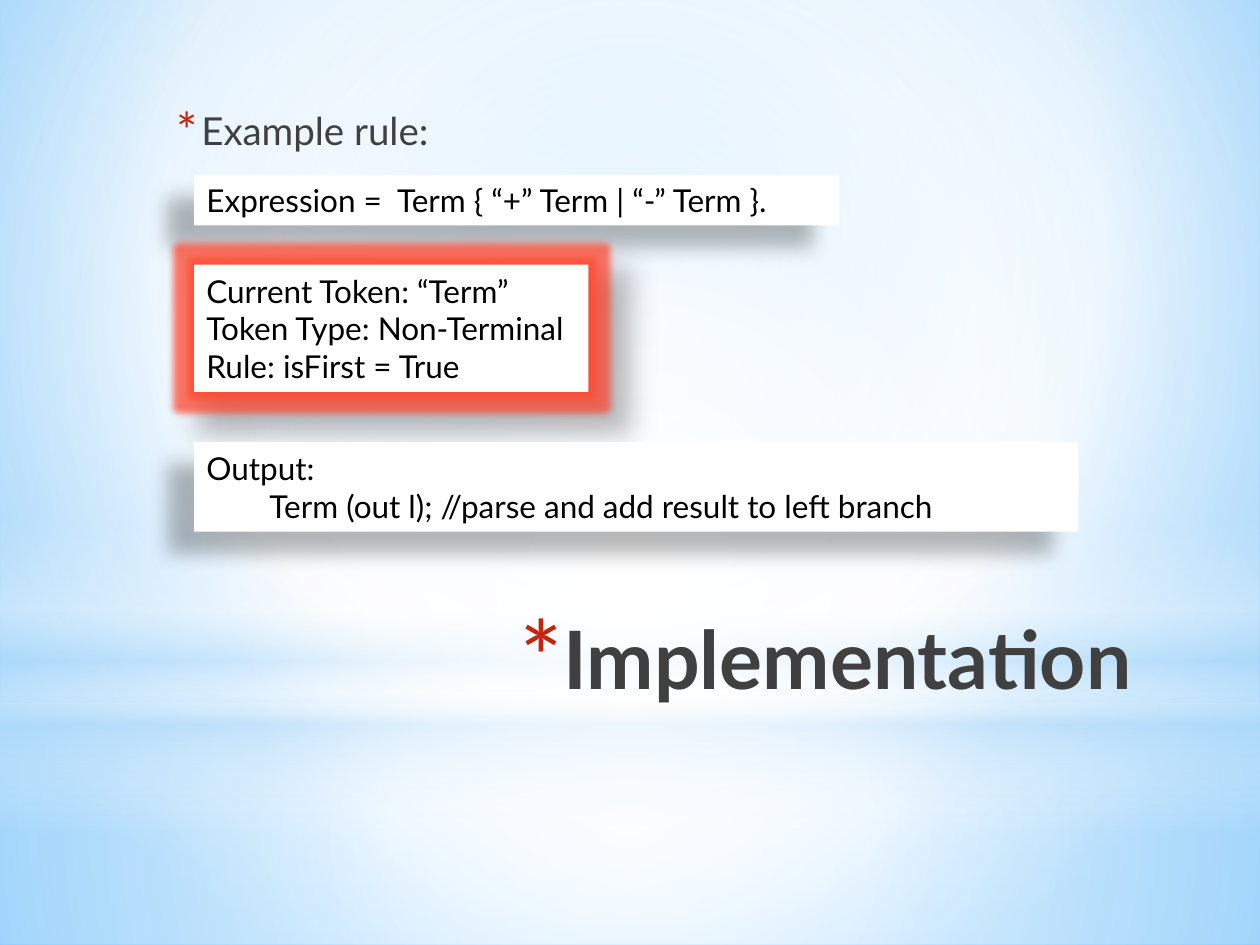
from lxml import etree
from pptx import Presentation
from pptx.dml.color import RGBColor
from pptx.enum.shapes import MSO_SHAPE
from pptx.enum.text import MSO_ANCHOR, PP_ALIGN
from pptx.oxml import parse_xml
from pptx.oxml.ns import nsdecls, qn
from pptx.util import Pt

RECTANGLE = MSO_SHAPE.RECTANGLE
OVAL = MSO_SHAPE.OVAL
LEFT = PP_ALIGN.LEFT
RIGHT = PP_ALIGN.RIGHT
TOP = MSO_ANCHOR.TOP
MIDDLE = MSO_ANCHOR.MIDDLE

FONT = "Lato"
BLACK = "000000"
GRAY = "404040"
WHITE = "FFFFFF"
RED = "C3260C"
PALE_BLUE = "B4DCFA"
CENTER = (50, 50, 50, 50)
CARD_LEFT = 110.9
SOFT_SHADOW = (28, 11.8, 19.7, 141)
GLOW_SHADOW = (30, 15, 18, 45)


def color(hex_string):
    return RGBColor.from_string(hex_string)


def apply_gradient(fill, parent, stops, focus=None):
    fill.solid()
    stop_xml = "".join(
        f'<a:gs pos="{position * 1000}"><a:srgbClr val="{hex_string}">'
        f'<a:alpha val="{opacity * 1000}"/></a:srgbClr></a:gs>'
        for position, hex_string, opacity in stops
    )
    if focus:
        sides = " ".join(f'{side}="{value * 1000}"' for side, value in zip("ltrb", focus))
        direction = f'<a:path path="circle"><a:fillToRect {sides}/></a:path>'
    else:
        direction = '<a:lin ang="5400000" scaled="0"/>'
    gradient = parse_xml(
        f'<a:gradFill {nsdecls("a")} rotWithShape="1">'
        f"<a:gsLst>{stop_xml}</a:gsLst>{direction}</a:gradFill>"
    )
    solid = parent.find(qn("a:solidFill"))
    parent.replace(solid, gradient)


def add_plain_shape(slide, kind, left, top, width, height):
    shape = slide.shapes.add_shape(kind, Pt(left), Pt(top), Pt(width), Pt(height))
    shape.shadow.inherit = False
    shape.line.fill.background()
    return shape


def add_gradient_shape(slide, kind, top, height, stops, focus=None):
    shape = add_plain_shape(slide, kind, 0, top, 720, height)
    apply_gradient(shape.fill, shape.element.spPr, stops, focus)


def write_text(text_frame, text, size, hex_string, alignment=LEFT, anchor=TOP, bold=False):
    text_frame.text = text
    text_frame.word_wrap = True
    text_frame.vertical_anchor = anchor
    for paragraph in text_frame.paragraphs:
        paragraph.alignment = alignment
        for run in paragraph.runs:
            run.font.name = FONT
            run.font.size = Pt(size)
            run.font.bold = bold
            run.font.color.rgb = color(hex_string)


def add_bullet(paragraph, margin, indent, percent):
    properties = paragraph._p.get_or_add_pPr()
    properties.set("marL", str(Pt(margin)))
    properties.set("indent", str(Pt(indent)))
    bullet_color = etree.SubElement(properties, qn("a:buClr"))
    etree.SubElement(bullet_color, qn("a:srgbClr"), val=RED)
    etree.SubElement(properties, qn("a:buSzPct"), val=str(percent * 1000))
    etree.SubElement(properties, qn("a:buFont"), typeface=FONT)
    etree.SubElement(properties, qn("a:buChar"), char="*")


def add_effects(shape, shadow, glow=False):
    effects = shape.element.spPr.find(qn("a:effectLst"))
    if glow:
        effects.append(parse_xml(
            f'<a:glow {nsdecls("a")} rad="{Pt(8)}"><a:srgbClr val="FF4A33">'
            '<a:alpha val="75000"/></a:srgbClr></a:glow>'
        ))
    opacity, blur, distance, angle = shadow
    effects.append(parse_xml(
        f'<a:outerShdw {nsdecls("a")} blurRad="{Pt(blur)}" dist="{Pt(distance)}" '
        f'dir="{angle * 60000}" algn="ctr" rotWithShape="0"><a:srgbClr val="{BLACK}">'
        f'<a:alpha val="{opacity * 1000}"/></a:srgbClr></a:outerShdw>'
    ))


def add_card(slide, top, width, height, text, shadow, glow=False):
    card = add_plain_shape(slide, RECTANGLE, CARD_LEFT, top, width, height)
    card.fill.solid()
    card.fill.fore_color.rgb = color(WHITE)
    add_effects(card, shadow, glow)
    write_text(card.text_frame, text, 18, BLACK, anchor=MIDDLE)


def add_backdrop(slide):
    fill = slide.background.fill
    fill.solid()
    background = slide.element.find(".//" + qn("p:bgPr"))
    apply_gradient(fill, background,
                   [(0, "9ED5FF", 100), (60, WHITE, 100), (100, "5BB9FF", 100)],
                   (20, 10, 20, 60))
    add_gradient_shape(slide, RECTANGLE, 401.8, 138.2,
                       [(0, WHITE, 91), (37, WHITE, 76), (100, PALE_BLUE, 79)], CENTER)
    add_gradient_shape(slide, RECTANGLE, 0, 401.8,
                       [(0, WHITE, 89), (48, WHITE, 62), (100, PALE_BLUE, 79)], CENTER)
    add_gradient_shape(slide, RECTANGLE, 296.6, 180,
                       [(0, WHITE, 0), (29, WHITE, 30), (45, PALE_BLUE, 40),
                        (55, WHITE, 26), (65, PALE_BLUE, 60), (100, WHITE, 0)])
    add_gradient_shape(slide, OVAL, 126, 401.8,
                       [(0, WHITE, 100), (56, WHITE, 0)], CENTER)


def place_title(slide):
    title = slide.shapes.title
    slide.shapes.element.append(title.element)
    title.left, title.top, title.width, title.height = Pt(141.1), Pt(344.2), Pt(512.6), Pt(90)
    write_text(title.text_frame, "Implementation", 46, GRAY, RIGHT, bold=True)
    add_bullet(title.text_frame.paragraphs[0], 25.2, -25.2, 128)


def add_body(slide):
    body = slide.shapes.add_textbox(Pt(90), Pt(57.6), Pt(504), Pt(273.6))
    write_text(body.text_frame, "Example rule:", 22, GRAY)
    paragraph = body.text_frame.paragraphs[0]
    paragraph.space_after = Pt(3)
    add_bullet(paragraph, 18, -14.4, 130)


def main():
    presentation = Presentation()
    presentation.slide_width = Pt(720)
    presentation.slide_height = Pt(540)
    slide = presentation.slides.add_slide(presentation.slide_layouts[5])
    add_backdrop(slide)
    place_title(slide)
    add_body(slide)
    add_card(slide, 100.1, 368.6, 28.8,
             "Expression =  Term { “+” Term | “-” Term }.", SOFT_SHADOW)
    add_card(slide, 151.2, 225.4, 72.7,
             "Current Token: “Term”\nToken Type: Non-Terminal\nRule: isFirst = True",
             GLOW_SHADOW, glow=True)
    add_card(slide, 252.7, 505.4, 51.1,
             "Output:\n\tTerm (out l); //parse and add result to left branch", SOFT_SHADOW)
    presentation.save("out.pptx")


if __name__ == "__main__":
    main()
